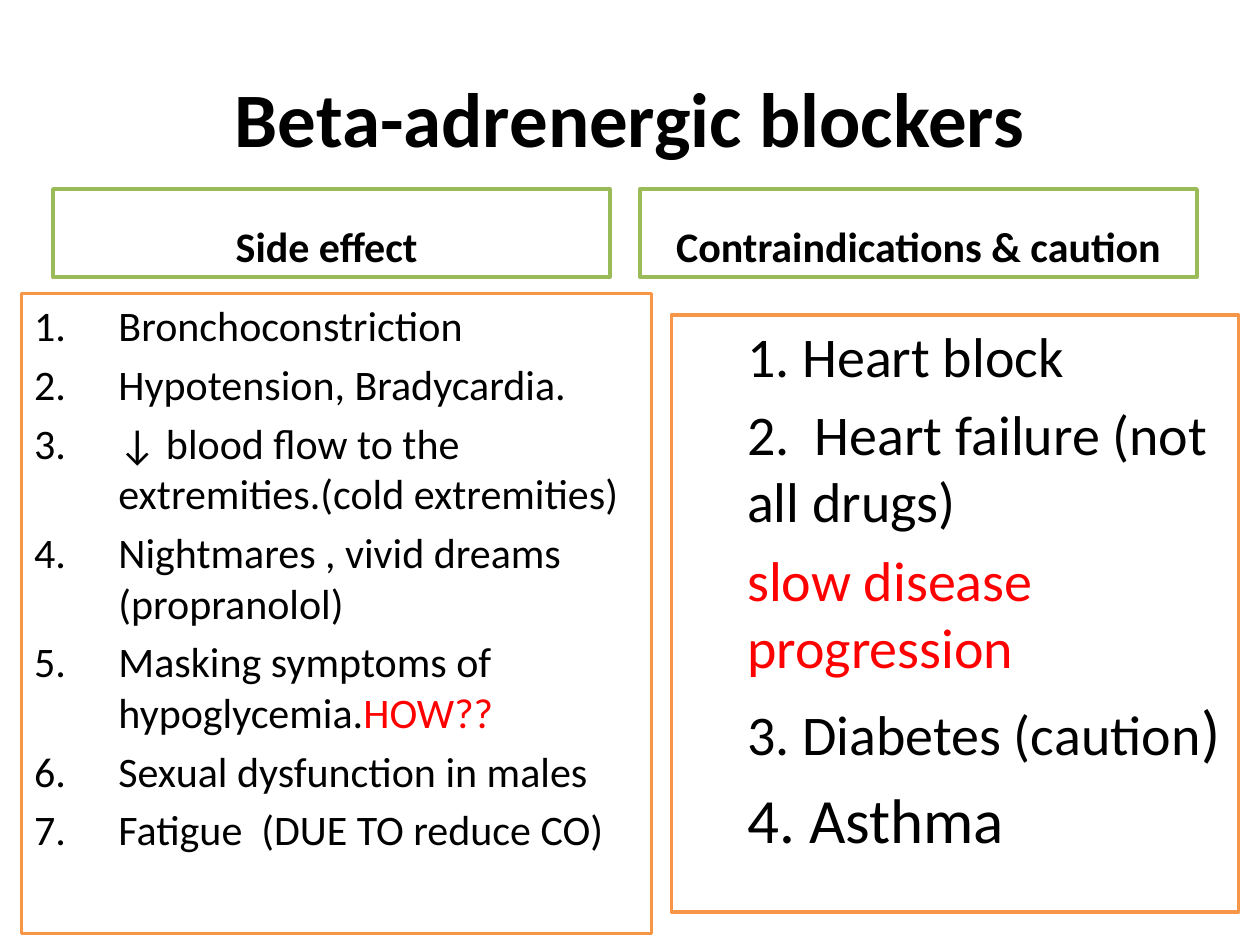
from lxml import etree
from pptx import Presentation
from pptx import util as u
from pptx.dml.color import RGBColor
from pptx.enum import text
from pptx.oxml import ns

BLACK = RGBColor(0, 0, 0)
RED = RGBColor(0xFF, 0, 0)
WHITE = RGBColor(0xFF, 0xFF, 0xFF)
GREEN = RGBColor(0x9B, 0xBB, 0x59)
ORANGE = RGBColor(0xF7, 0x96, 0x46)
FONT = "Calibri"

SIDE_EFFECTS = [
    [("Bronchoconstriction", 24, BLACK)],
    [("Hypotension, Bradycardia.", 24, BLACK)],
    [("↓ blood flow to the extremities.(cold extremities)", 24, BLACK)],
    [("Nightmares , vivid dreams  (propranolol)", 24, BLACK)],
    [("Masking symptoms of hypoglycemia.", 24, BLACK), ("HOW??", 24, RED)],
    [("Sexual dysfunction in males", 24, BLACK)],
    [("Fatigue  (DUE TO reduce CO)", 24, BLACK)],
]
CAUTIONS = [
    [("1. Heart block", 32, BLACK)],
    [("2.  Heart failure (not all drugs)", 32, BLACK)],
    [("slow disease progression", 32, RED)],
    [("3. Diabetes (caution", 32, BLACK), (")", 36, BLACK)],
    [("4. Asthma", 36, BLACK)],
]


def place(sp, left, top, width, height, anchor):
    sp.left, sp.top = u.Inches(left), u.Inches(top)
    sp.width, sp.height = u.Inches(width), u.Inches(height)
    tf = sp.text_frame
    tf.word_wrap = True
    tf.auto_size = text.MSO_AUTO_SIZE.NONE
    tf.vertical_anchor = anchor
    return tf


def frame(sp, color):
    sp.fill.solid()
    sp.fill.fore_color.rgb = WHITE
    sp.line.color.rgb = color
    sp.line.width = u.Pt(2)


def add_runs(p, runs, bold=False):
    for words, size, color in runs:
        r = p.add_run()
        r.text = words
        r.font.name = FONT
        r.font.size = u.Pt(size)
        r.font.bold = bold
        r.font.color.rgb = color


def add_heading(sp, box, words, size, anchor):
    p = place(sp, *box, anchor).paragraphs[0]
    p.alignment = text.PP_ALIGN.CENTER
    add_runs(p, [(words, size, BLACK)], bold=True)


def set_bullet(p, margin, indent, numbered):
    pPr = p._p.get_or_add_pPr()
    pPr.set("marL", str(u.Inches(margin)))
    pPr.set("indent", str(u.Inches(indent)))
    if numbered:
        etree.SubElement(pPr, ns.qn("a:buFont"), typeface="+mj-lt")
        etree.SubElement(pPr, ns.qn("a:buAutoNum"), type="arabicPeriod")
    else:
        etree.SubElement(pPr, ns.qn("a:buNone"))


def add_list(sp, box, items, numbered):
    tf = place(sp, *box, text.MSO_ANCHOR.TOP)
    frame(sp, ORANGE)
    for i, runs in enumerate(items):
        p = tf.add_paragraph() if i else tf.paragraphs[0]
        if numbered:
            set_bullet(p, 0.67, -0.67, True)
        else:
            p.level = 1
            set_bullet(p, 0.5, 0, False)
        add_runs(p, runs)


def main():
    prs = Presentation()
    prs.slide_width, prs.slide_height = u.Inches(10), u.Inches(7.5)
    s = prs.slides.add_slide(prs.slide_layouts.get_by_name("Comparison"))
    title, left_head, left_list, right_head, right_list = [
        s.placeholders[i] for i in range(5)]

    add_heading(title, (0.5, 0.3, 9, 1.25), "Beta-adrenergic blockers", 44,
                text.MSO_ANCHOR.MIDDLE)
    for sp, left, words in [(left_head, 0.42, "Side effect "),
                            (right_head, 5.08, "Contraindications & caution")]:
        add_heading(sp, (left, 1.5, 4.42, 0.7), words, 24, text.MSO_ANCHOR.BOTTOM)
        frame(sp, GREEN)
    add_list(left_list, (0.17, 2.33, 5, 5.08), SIDE_EFFECTS, True)
    add_list(right_list, (5.33, 2.5, 4.5, 4.74), CAUTIONS, False)
    prs.save("out.pptx")


if __name__ == "__main__":
    main()
